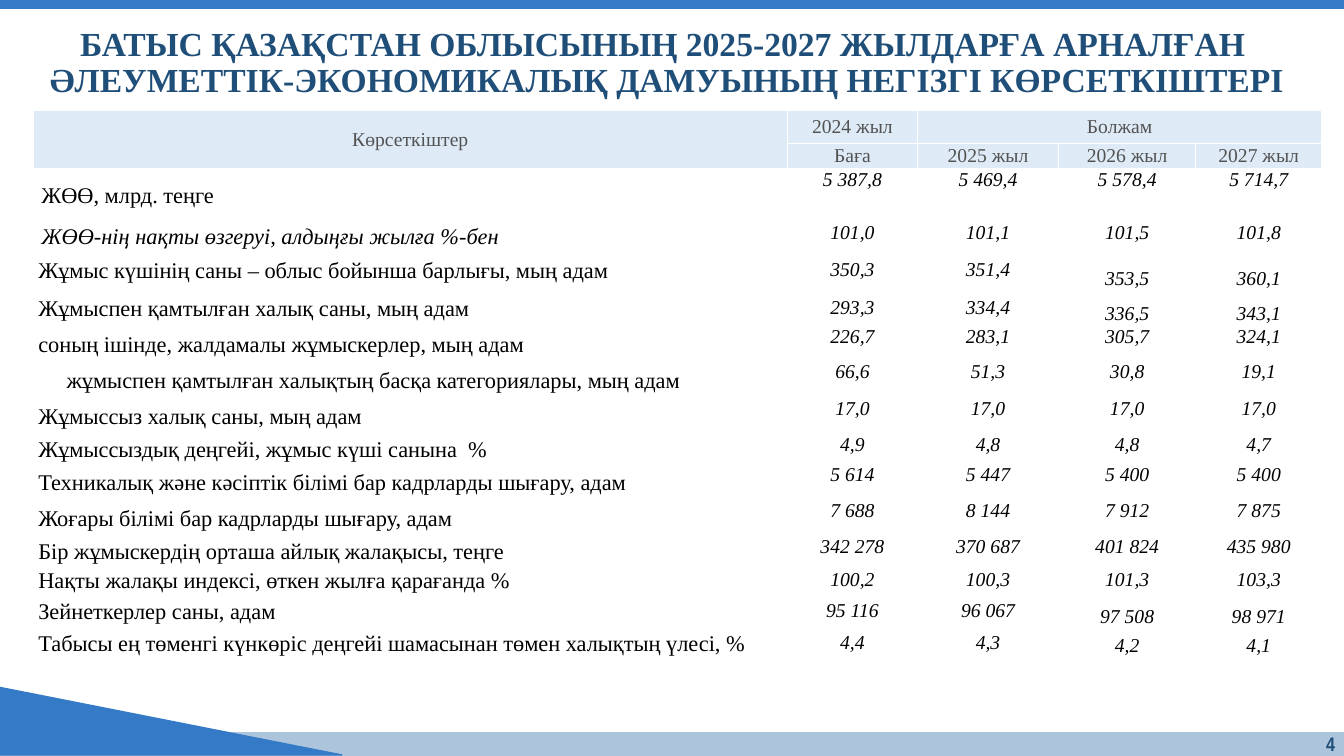
from dataclasses import dataclass

from lxml import etree
from pptx import Presentation
from pptx.dml.color import RGBColor
from pptx.enum.shapes import MSO_SHAPE
from pptx.enum.text import MSO_ANCHOR, MSO_AUTO_SIZE, PP_ALIGN
from pptx.oxml.ns import qn
from pptx.util import Inches, Pt

RECT, RIGHT_TRIANGLE = MSO_SHAPE.RECTANGLE, MSO_SHAPE.RIGHT_TRIANGLE
TOP, MID, BOTTOM = MSO_ANCHOR.TOP, MSO_ANCHOR.MIDDLE, MSO_ANCHOR.BOTTOM
LEFT, CENTER, RIGHT = PP_ALIGN.LEFT, PP_ALIGN.CENTER, PP_ALIGN.RIGHT

NAVY = RGBColor(0x1F, 0x4E, 0x79)
BLUE = RGBColor(0x34, 0x7A, 0xC6)
PALE_BLUE = RGBColor(0xAC, 0xC5, 0xDC)
HEADER_FILL = RGBColor(0xDE, 0xEB, 0xF7)
HEADER_TEXT = RGBColor(0x52, 0x52, 0x52)
BLACK = RGBColor(0, 0, 0)
WHITE = RGBColor(0xFF, 0xFF, 0xFF)
SERIF = "Times New Roman"
NARROW = "Arial Narrow"


@dataclass
class Band:
    kind: int
    left: float
    top: float
    width: float
    height: float
    color: RGBColor


@dataclass
class Indicator:
    height: float
    label: str
    values: tuple
    anchor: int = TOP
    late_anchor: int = TOP
    indent: float = 0.05
    italic: bool = False


@dataclass
class Header:
    row: int
    col: int
    text: str
    last_row: int
    last_col: int


BANDS = [
    Band(RECT, 0, 7.27, 13.33, 0.23, PALE_BLUE),
    Band(RIGHT_TRIANGLE, 0, 6.82, 3.39, 0.67, BLUE),
    Band(RECT, 0, -0.02, 13.33, 0.1, BLUE),
]
TITLE = [
    "БАТЫС ҚАЗАҚСТАН ОБЛЫСЫНЫҢ 2025-2027 ЖЫЛДАРҒА АРНАЛҒАН ",
    "ӘЛЕУМЕТТІК-ЭКОНОМИКАЛЫҚ ДАМУЫНЫҢ НЕГІЗГІ КӨРСЕТКІШТЕРІ",
]
COL_WIDTHS = [7.48, 1.29, 1.4, 1.36, 1.25]
HEADER_HEIGHTS = [0.32, 0.25]
HEADERS = [
    Header(0, 0, "Көрсеткіштер", 1, 0),
    Header(0, 1, "2024 жыл", 0, 1),
    Header(0, 2, "Болжам", 0, 4),
    Header(1, 1, "Баға", 1, 1),
    Header(1, 2, "2025 жыл", 1, 2),
    Header(1, 3, "2026 жыл", 1, 3),
    Header(1, 4, "2027 жыл", 1, 4),
]
INDICATORS = [
    Indicator(0.52, "ЖӨӨ, млрд. теңге", ("5 387,8", "5 469,4", "5 578,4", "5 714,7"), indent=0.08),
    Indicator(0.28, "ЖӨӨ-нің нақты өзгеруі, алдыңғы жылға %-бен",
              ("101,0", "101,1", "101,5", "101,8"), indent=0.08, italic=True),
    Indicator(0.4, "Жұмыс күшінің саны – облыс бойынша барлығы, мың адам",
              ("350,3", "351,4", "353,5", "360,1"), MID, BOTTOM),
    Indicator(0.35, "Жұмыспен қамтылған халық саны, мың адам",
              ("293,3", "334,4", "336,5", "343,1"), MID, BOTTOM),
    Indicator(0.35, "соның ішінде, жалдамалы жұмыскерлер, мың адам",
              ("226,7", "283,1", "305,7", "324,1")),
    Indicator(0.37, "жұмыспен қамтылған халықтың басқа категориялары, мың адам",
              ("66,6", "51,3", "30,8", "19,1"), indent=0.33),
    Indicator(0.35, "Жұмыссыз халық саны, мың адам", ("17,0", "17,0", "17,0", "17,0")),
    Indicator(0.3, "Жұмыссыздық деңгейі, жұмыс күші санына  %", ("4,9", "4,8", "4,8", "4,7")),
    Indicator(0.36, "Техникалық және кәсіптік білімі бар кадрларды шығару, адам",
              ("5 614", "5 447", "5 400", "5 400")),
    Indicator(0.35, "Жоғары білімі бар кадрларды шығару, адам",
              ("7 688", "8 144", "7 912", "7 875")),
    Indicator(0.3, "Бір жұмыскердің орташа айлық жалақысы, теңге",
              ("342 278", "370 687", "401 824", "435 980")),
    Indicator(0.28, "Нақты жалақы индексi, өткен жылға қарағанда %",
              ("100,2", "100,3", "101,3", "103,3"), MID, MID),
    Indicator(0.34, "Зейнеткерлер саны, адам",
              ("95 116", "96 067", "97 508", "98 971"), MID, BOTTOM),
    Indicator(0.27, "Табысы ең төменгі күнкөріс деңгейі шамасынан төмен халықтың үлесі, %",
              ("4,4", "4,3", "4,2", "4,1"), MID, BOTTOM),
]


def style(p, size: int, color: RGBColor, align: int, spacing: float = 1.0,
          font: str = SERIF, bold: bool = False, italic: bool = False) -> None:
    p.alignment = align
    p.line_spacing = spacing
    p.font.name = font
    p.font.size = Pt(size)
    p.font.color.rgb = color
    p.font.bold = bold
    p.font.italic = italic


def add_band(s, band: Band) -> None:
    sp = s.shapes.add_shape(band.kind, Inches(band.left), Inches(band.top),
                            Inches(band.width), Inches(band.height))
    sp.shadow.inherit = False
    sp.fill.solid()
    sp.fill.fore_color.rgb = band.color
    sp.line.color.rgb = band.color
    sp.line.width = Pt(1)


def add_title(s) -> None:
    sp = s.shapes.title
    sp.left, sp.top, sp.width, sp.height = map(Inches, (0.16, 0.28, 12.91, 0.7))
    tf = sp.text_frame
    tf.text = "\n".join(TITLE)
    tf.word_wrap = True
    tf.auto_size = MSO_AUTO_SIZE.NONE
    tf.vertical_anchor = MID
    for p in tf.paragraphs:
        style(p, 24, NAVY, CENTER, 0.9, bold=True)
        p.space_before = Pt(0)


def set_cell(cell, text: str, anchor: int, margins: tuple):
    cell.text = text
    cell.vertical_anchor = anchor
    cell.margin_left, cell.margin_top, cell.margin_right, cell.margin_bottom = map(Inches, margins)
    return cell.text_frame.paragraphs[0]


def set_borders(cell, color: RGBColor) -> None:
    tc_pr = cell._tc.get_or_add_tcPr()
    for i, side in enumerate(("a:lnL", "a:lnR", "a:lnT", "a:lnB")):
        ln = etree.Element(qn(side), w=str(Pt(1)))
        fill = etree.SubElement(ln, qn("a:solidFill"))
        etree.SubElement(fill, qn("a:srgbClr"), val=str(color))
        tc_pr.insert(i, ln)


def add_headers(table) -> None:
    for row in range(len(HEADER_HEIGHTS)):
        for cell in table.rows[row].cells:
            cell.fill.solid()
            cell.fill.fore_color.rgb = HEADER_FILL
            set_borders(cell, WHITE)
    for h in HEADERS:
        cell = table.cell(h.row, h.col)
        if (h.row, h.col) != (h.last_row, h.last_col):
            cell.merge(table.cell(h.last_row, h.last_col))
        style(set_cell(cell, h.text, MID, (0, 0, 0, 0)), 14, HEADER_TEXT, CENTER)


def add_indicator(table, row: int, item: Indicator) -> None:
    for cell in table.rows[row].cells:
        cell.fill.background()
    p = set_cell(table.cell(row, 0), item.label, MID, (item.indent, 0, 0, 0))
    style(p, 16, BLACK, LEFT, 1.15, italic=item.italic)
    for col, value in enumerate(item.values, 1):
        anchor = item.anchor if col < 3 else item.late_anchor
        p = set_cell(table.cell(row, col), value, anchor, (0.01, 0.01, 0.01, 0))
        style(p, 14, BLACK, CENTER, italic=True)


def add_indicator_table(s) -> None:
    heights = HEADER_HEIGHTS + [item.height for item in INDICATORS]
    table = s.shapes.add_table(len(heights), len(COL_WIDTHS), Inches(0.33), Inches(1.1),
                               Inches(sum(COL_WIDTHS)), Inches(sum(heights))).table
    table.first_row = False
    table.horz_banding = False
    for column, width in zip(table.columns, COL_WIDTHS):
        column.width = Inches(width)
    for row, height in zip(table.rows, heights):
        row.height = Inches(height)
    add_headers(table)
    for row, item in enumerate(INDICATORS, len(HEADER_HEIGHTS)):
        add_indicator(table, row, item)


def add_page_number(s) -> None:
    tf = s.shapes.add_textbox(Inches(12.62), Inches(7.26), Inches(0.72), Inches(0.27)).text_frame
    tf.word_wrap = True
    tf.vertical_anchor = MID
    tf.text = "4"
    style(tf.paragraphs[0], 14, NAVY, RIGHT, 0.9, NARROW, bold=True)


def main() -> None:
    prs = Presentation()
    prs.slide_width, prs.slide_height = Inches(13.33), Inches(7.5)
    s = prs.slides.add_slide(prs.slide_layouts[5])
    for band in BANDS:
        add_band(s, band)
    add_title(s)
    add_indicator_table(s)
    add_page_number(s)
    prs.save("out.pptx")


if __name__ == "__main__":
    main()
